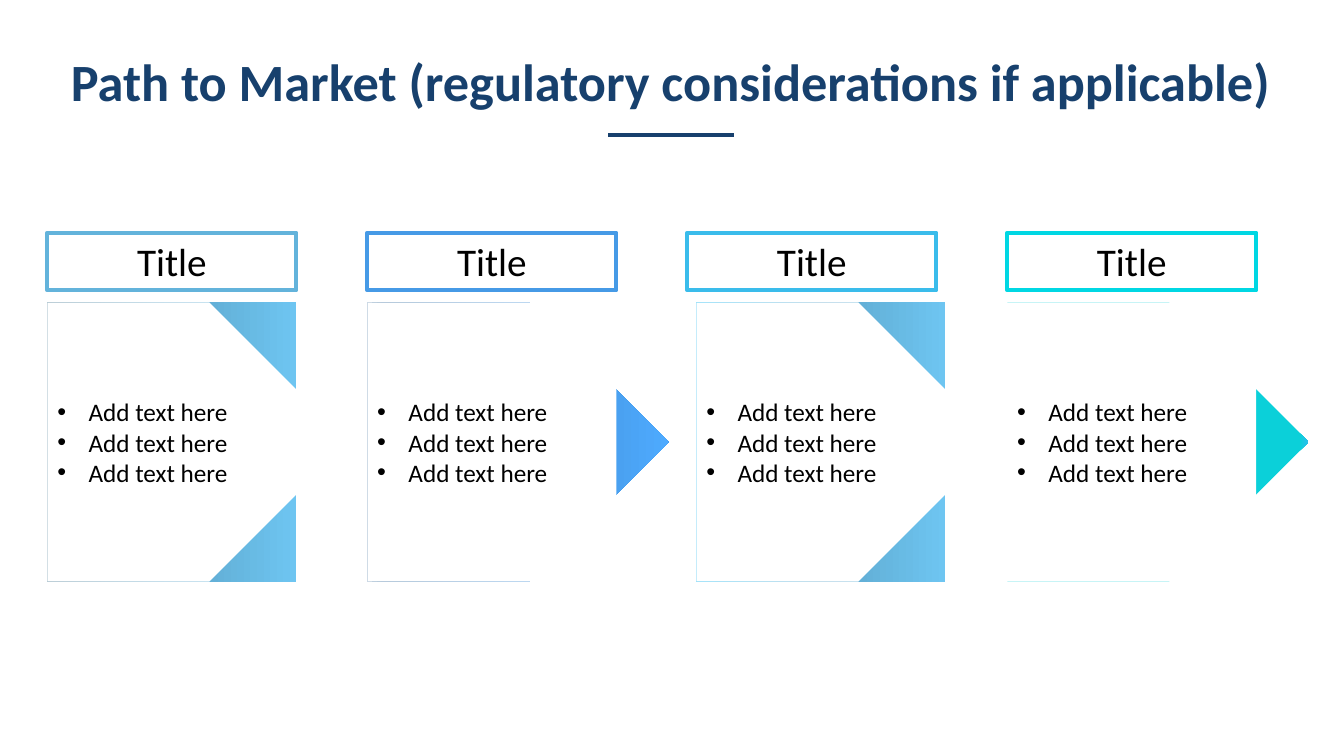
from dataclasses import dataclass

from lxml.etree import SubElement
from pptx import Presentation
from pptx.dml.color import RGBColor
from pptx.enum.shapes import MSO_CONNECTOR, MSO_SHAPE
from pptx.enum.text import MSO_ANCHOR, MSO_AUTO_SIZE, PP_ALIGN
from pptx.oxml.ns import qn
from pptx.util import Inches, Pt


@dataclass(frozen=True)
class Theme:
    """Colours, font and type sizes of the slide."""
    font: str = "Calibri"
    navy: str = "17406D"
    black: str = "000000"
    white: str = "FFFFFF"
    heading: float = 37.4
    label: float = 28
    body: float = 18
    rule: float = 3


THEME = Theme()
ITEMS = ["Add text here"] * 3
STAGES = [
    dict(label="Title", outline="63B3DB", arrow_out=False, shift=0,
         stops=[(0, "41758F"), (50, "5DA6CB"), (100, "6EC5F1")]),
    dict(label="Title", outline="469AE6", arrow_out=True, shift=0,
         stops=[(0, "2E6596"), (50, "428FD6"), (100, "4EAAFE")]),
    dict(label="Title", outline="3ABCEB", arrow_out=False, shift=0.09,
         stops=[(0, "00B0F0"), (50, "5DA6CB"), (100, "6EC5F1")]),
    dict(label="Title", outline="00D7E3", arrow_out=True, shift=0,
         stops=[(97, "0BD0D9"), (100, "2DBDEC"), (100, "4EAAFE")]),
]


def add_text(tf, lines, size, color=THEME.black, bold=False, align=PP_ALIGN.LEFT,
             anchor=MSO_ANCHOR.MIDDLE, spacing=None, bullet=False):
    """Write one paragraph per line in a single format."""
    tf.word_wrap = True
    tf.vertical_anchor = anchor
    for i, line in enumerate(lines):
        p = tf.paragraphs[0] if i == 0 else tf.add_paragraph()
        p.alignment = align
        if spacing:
            p.line_spacing = spacing
        if bullet:
            pPr = p._p.get_or_add_pPr()
            pPr.set("marL", str(Inches(0.31)))
            pPr.set("indent", str(-Inches(0.31)))
            SubElement(pPr, qn("a:buFont")).set("typeface", "Arial")
            SubElement(pPr, qn("a:buChar")).set("char", "•")
        r = p.add_run()
        r.text = line
        r.font.name = THEME.font
        r.font.size = Pt(size)
        r.font.bold = bold
        r.font.color.rgb = RGBColor.from_string(color)


def add_panel(slide, kind, box, fill=None, stops=None, outline=None):
    """Add a preset shape with a plain, gradient or empty fill."""
    sp = slide.shapes.add_shape(kind, *map(Inches, box))
    sp.shadow.inherit = False
    if stops:
        sp.fill.gradient()
        sp.fill.gradient_angle = 0
        gs_list = sp.fill._fill._gradFill.find(qn("a:gsLst"))
        for gs in list(gs_list):
            gs_list.remove(gs)
        for pos, color in stops:
            gs = SubElement(gs_list, qn("a:gs"), pos=str(pos * 1000))
            SubElement(gs, qn("a:srgbClr"), val=color)
    elif fill:
        sp.fill.solid()
        sp.fill.fore_color.rgb = RGBColor.from_string(fill)
    else:
        sp.fill.background()
    if outline:
        sp.line.color.rgb = RGBColor.from_string(outline)
        sp.line.width = Pt(THEME.rule)
    else:
        sp.line.fill.background()
    return sp


def add_header(slide, box, text):
    """Add the heading with a short centred rule below it."""
    x, y, w, h = box
    tf = slide.shapes.add_textbox(*map(Inches, box)).text_frame
    tf.margin_left = tf.margin_right = tf.margin_top = tf.margin_bottom = 0
    add_text(tf, [text], THEME.heading, color=THEME.navy, bold=True,
             align=PP_ALIGN.CENTER, spacing=0.8)
    mid, rule_y, half = x + w / 2, y + h + 0.12, 0.625
    line = slide.shapes.add_connector(
        MSO_CONNECTOR.STRAIGHT, *map(Inches, (mid - half, rule_y, mid + half, rule_y)))
    line.line.color.rgb = RGBColor.from_string(THEME.navy)
    line.line.width = Pt(THEME.rule)
    SubElement(line._element.spPr, qn("a:effectLst"))


def add_stage(slide, box, label, outline, arrow_out, shift, stops):
    """Add a labelled column whose arrow points out of or cuts into its panel."""
    x, y, w, h = box
    label_h, gap, tip = 0.57, 0.12, 0.52
    sp = add_panel(slide, MSO_SHAPE.RECTANGLE, (x, y, w, label_h), outline=outline)
    add_text(sp.text_frame, [label], THEME.label, align=PP_ALIGN.CENTER,
             anchor=MSO_ANCHOR.TOP)
    sp.text_frame.auto_size = MSO_AUTO_SIZE.SHAPE_TO_FIT_TEXT

    left, top, body_h = x + shift, y + label_h + gap, h - label_h - gap
    square = MSO_SHAPE.RECTANGLE, (left, top, w, body_h)
    arrow = MSO_SHAPE.PENTAGON, (left, top, w + tip, body_h)
    back, front = (arrow, square) if arrow_out else (square, arrow)
    add_panel(slide, *back, stops=stops)
    sp = add_panel(slide, *front, fill=THEME.white)
    add_text(sp.text_frame, ITEMS, THEME.body, bullet=True)


def main():
    """Build the slide and save it."""
    prs = Presentation()
    prs.slide_width, prs.slide_height = Inches(13.33), Inches(7.5)
    slide = prs.slides.add_slide(prs.slide_layouts[6])
    add_header(slide, (0.56, 0.5, 12.2, 0.72),
               "Path to Market (regulatory considerations if applicable)")
    first, last = 0.47, 9.99
    pitch = (last - first) / (len(STAGES) - 1)
    for i, stage in enumerate(STAGES):
        add_stage(slide, (first + i * pitch, 2.31, 2.47, 3.46), **stage)
    prs.save("out.pptx")


if __name__ == "__main__":
    main()
